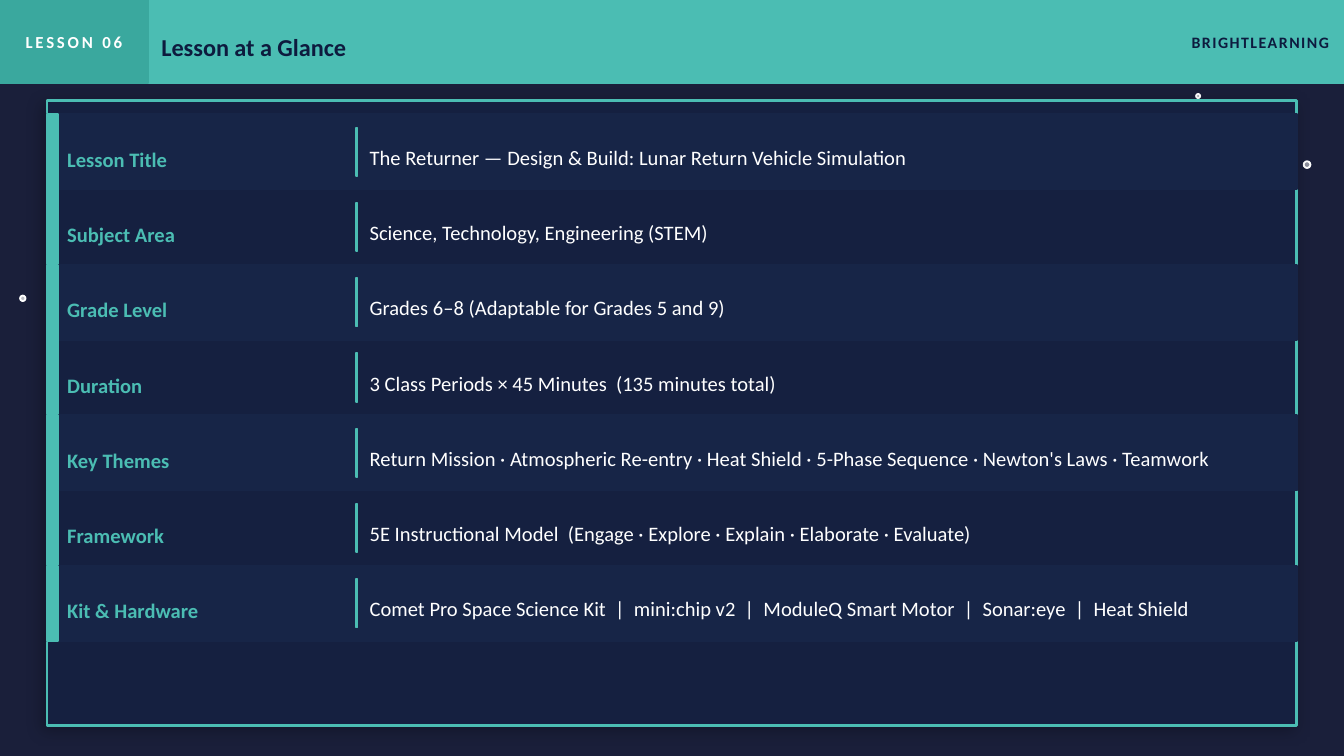
import pptx
import pptx.util
import pptx.dml.color
import pptx.enum.shapes
import pptx.enum.text
import pptx.oxml
import pptx.oxml.ns

LESSON = "LESSON 06"
TITLE = "Lesson at a Glance"
BRAND = "BRIGHTLEARNING"
FACTS = [
    ("Lesson Title", "The Returner — Design & Build: Lunar Return Vehicle Simulation"),
    ("Subject Area", "Science, Technology, Engineering (STEM)"),
    ("Grade Level", "Grades 6–8 (Adaptable for Grades 5 and 9)"),
    ("Duration", "3 Class Periods × 45 Minutes  (135 minutes total)"),
    ("Key Themes", "Return Mission · Atmospheric Re-entry · Heat Shield · 5-Phase Sequence · Newton's Laws · Teamwork"),
    ("Framework", "5E Instructional Model  (Engage · Explore · Explain · Elaborate · Evaluate)"),
    ("Kit & Hardware", "Comet Pro Space Science Kit  |  mini:chip v2  |  ModuleQ Smart Motor  |  Sonar:eye  |  Heat Shield"),
]
STARS = [(8.9, 0.7, 0.03, 60), (9.7, 1.2, 0.05, 50), (0.15, 2.2, 0.04, 70)]
COLORS = {
    "night": "1A1F3A",
    "teal": "4BBDB3",
    "deep_teal": "3AA89E",
    "navy": "0D1B3E",
    "panel": "152040",
    "stripe": "172547",
    "white": "FFFFFF",
}
FONT = "Calibri"
HEADER_HEIGHT = 0.62
PANEL_LEFT, PANEL_TOP, PANEL_WIDTH, PANEL_HEIGHT = 0.35, 0.75, 9.3, 4.65
ROWS_TOP, ROW_HEIGHT = 0.85, 0.56
TEXT_MARGIN, DIVIDER_MARGIN = 0.05, 0.1

Inches = pptx.util.Inches
SHAPES = pptx.enum.shapes.MSO_SHAPE
ALIGN = pptx.enum.text.PP_ALIGN


def color(name):
    return pptx.dml.color.RGBColor.from_string(COLORS[name])


def place(shape, left, top, width, height):
    shape.left, shape.top = Inches(left), Inches(top)
    shape.width, shape.height = Inches(width), Inches(height)


def add_block(page, area, fill, line=None, line_width=1, kind=SHAPES.RECTANGLE):
    block = page.shapes.add_shape(kind, *map(Inches, area))
    block.shadow.inherit = False
    block.fill.solid()
    block.fill.fore_color.rgb = color(fill)
    block.line.color.rgb = color(line or fill)
    block.line.width = pptx.util.Pt(line_width)
    return block


def write(box, text, size, ink, bold=True, align=ALIGN.LEFT, top=0, right=0, spacing=0):
    frame = box.text_frame
    frame.text = text
    frame.word_wrap = True
    frame.auto_size = pptx.enum.text.MSO_AUTO_SIZE.NONE
    frame.vertical_anchor = pptx.enum.text.MSO_ANCHOR.MIDDLE
    frame.margin_left = frame.margin_bottom = 0
    frame.margin_top, frame.margin_right = Inches(top), Inches(right)
    para = frame.paragraphs[0]
    para.alignment = align
    span = para.runs[0]
    span.font.name = FONT
    span.font.size = pptx.util.Pt(size)
    span.font.bold = bold
    span.font.color.rgb = color(ink)
    if spacing:
        span.font._element.set("spc", str(round(spacing * 100)))


def add_text(page, area, text, size, ink, **style):
    box = page.shapes.add_textbox(*map(Inches, area))
    write(box, text, size, ink, **style)


def add_star(page, left, top, size, opacity):
    star = add_block(page, (left, top, size, size), "white", kind=SHAPES.OVAL)
    tint = star.element.spPr.find(pptx.oxml.ns.qn("a:solidFill"))[0]
    tint.append(pptx.oxml.parse_xml(
        f'<a:alpha {pptx.oxml.ns.nsdecls("a")} val="{opacity * 1000}"/>'))


def add_shadow(shape):
    effects = shape.element.spPr.find(pptx.oxml.ns.qn("a:effectLst"))
    effects.append(pptx.oxml.parse_xml(
        f'<a:outerShdw {pptx.oxml.ns.nsdecls("a")} blurRad="101600" dist="38100" '
        'dir="8100000" algn="bl" rotWithShape="0">'
        '<a:srgbClr val="000000"><a:alpha val="25000"/></a:srgbClr></a:outerShdw>'))


def add_header(page):
    tab = (0, 0, 1.1, HEADER_HEIGHT)
    add_block(page, (0, 0, 10, HEADER_HEIGHT), "teal")
    add_block(page, tab, "deep_teal")
    add_text(page, tab, LESSON, 9, "white", align=ALIGN.CENTER, spacing=1.5)
    title = page.shapes.title
    place(title, 1.2, 0, 7.5, HEADER_HEIGHT)
    write(title, TITLE, 13, "navy", top=0.08)
    title.element.getparent().append(title.element)
    add_text(page, (7.7, 0, 2.3, HEADER_HEIGHT), BRAND, 8.5, "navy",
             align=ALIGN.RIGHT, right=0.11, spacing=0.8)


def add_fact(page, index, label, detail):
    top = ROWS_TOP + index * ROW_HEIGHT
    text_top, text_height = top + TEXT_MARGIN, ROW_HEIGHT - 2 * TEXT_MARGIN
    if index % 2 == 0:
        add_block(page, (PANEL_LEFT, top, PANEL_WIDTH, ROW_HEIGHT), "stripe")
    add_block(page, (PANEL_LEFT, top, 0.08, ROW_HEIGHT), "teal")
    add_text(page, (0.5, text_top, 2.1, text_height), label, 11, "teal", top=0.11)
    add_block(page, (2.65, top + DIVIDER_MARGIN, 0.01, ROW_HEIGHT - 2 * DIVIDER_MARGIN), "teal")
    add_text(page, (2.75, text_top, 6.75, text_height), detail, 11, "white", bold=False, top=0.08)


def main():
    deck = pptx.Presentation()
    deck.slide_width = Inches(10)
    deck.slide_height = deck.slide_width * 9 // 16
    page = deck.slides.add_slide(deck.slide_layouts.get_by_name("Title Only"))
    page.background.fill.solid()
    page.background.fill.fore_color.rgb = color("night")
    for star in STARS:
        add_star(page, *star)
    add_header(page)
    panel = add_block(page, (PANEL_LEFT, PANEL_TOP, PANEL_WIDTH, PANEL_HEIGHT),
                      "panel", line="teal", line_width=1.5)
    add_shadow(panel)
    for index, (label, detail) in enumerate(FACTS):
        add_fact(page, index, label, detail)
    deck.save("out.pptx")


if __name__ == "__main__":
    main()
